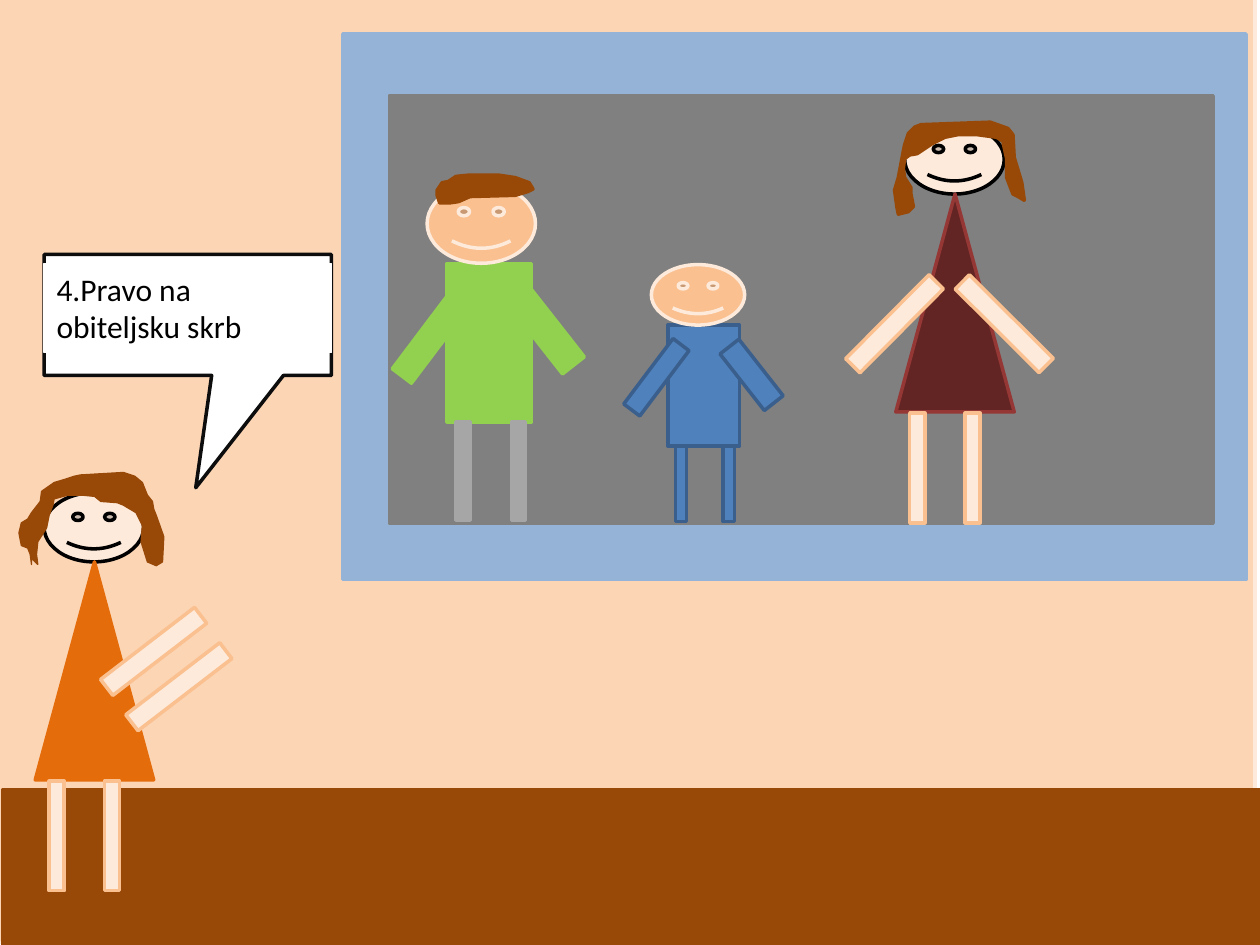
from dataclasses import dataclass
from typing import NamedTuple

from pptx import Presentation
from pptx.dml.color import RGBColor
from pptx.enum.shapes import MSO_SHAPE
from pptx.enum.text import MSO_ANCHOR
from pptx.util import Inches, Pt

RECT = MSO_SHAPE.RECTANGLE
FACE = MSO_SHAPE.SMILEY_FACE
DRESS = MSO_SHAPE.ISOSCELES_TRIANGLE
CALLOUT = MSO_SHAPE.RECTANGULAR_CALLOUT
TOP = MSO_ANCHOR.TOP


@dataclass(frozen=True)
class Theme:
    wall: str = "FCD5B5"
    skin: str = "FDEADA"
    skin_edge: str = "FAC090"
    brown: str = "984807"
    frame: str = "95B3D7"
    screen: str = "808080"
    blue: str = "4F81BD"
    blue_edge: str = "3A5F8C"
    green: str = "92D050"
    grey: str = "A6A6A6"
    maroon: str = "632523"
    maroon_edge: str = "953735"
    orange: str = "E46C0A"
    white: str = "FFFFFF"
    black: str = "000000"
    ink: str = "0D0D0D"
    font: str = "Calibri"
    text_size: float = 18
    line: float = 2
    thin: float = 0.75


T = Theme()


class Box(NamedTuple):
    x: float
    y: float
    w: float
    h: float
    rot: float = 0


class Paint(NamedTuple):
    fill: str
    edge: str


class Boy(NamedTuple):
    body: Box
    legs: tuple[Box, ...]
    arms: tuple[Box, ...]
    head: Box
    clothes: Paint
    trousers: Paint


class Woman(NamedTuple):
    x: float
    y: float
    dress: Paint
    arms: tuple[Box, ...]
    hair: list[tuple[int, int]]
    hair_line: float


SKIN = Paint(T.skin, T.skin_edge)
BLUE = Paint(T.blue, T.blue_edge)
HAIR = Paint(T.brown, T.brown)

# Hair outlines, in hundredths of an inch
MAN_HAIR = [(349, 161), (357, 161), (364, 160), (373, 156), (409, 155),
            (419, 152), (423, 150), (420, 145), (409, 141), (396, 139),
            (383, 139), (372, 139), (362, 140), (356, 144), (351, 145),
            (347, 151), (347, 155)]
MOTHER_HAIR = [(723, 149), (718, 141), (717, 134), (718, 126), (722, 123),
               (728, 122), (740, 114), (750, 109), (760, 107), (776, 107),
               (791, 109), (796, 112), (797, 117), (799, 126), (799, 141),
               (804, 154), (808, 156), (813, 159), (811, 145), (808, 135),
               (805, 125), (804, 107), (800, 102), (786, 97), (731, 99),
               (726, 101), (721, 106), (718, 115), (717, 120), (713, 141),
               (710, 151), (712, 165), (713, 170), (721, 168), (725, 164),
               (723, 154)]
GIRL_HAIR = [(30, 448), (29, 440), (30, 430), (37, 419), (39, 409), (42, 401),
             (43, 396), (54, 393), (65, 393), (75, 394), (80, 398), (93, 399),
             (98, 401), (108, 407), (113, 417), (112, 430), (117, 446),
             (124, 449), (129, 446), (130, 426), (124, 409), (122, 404),
             (121, 398), (117, 393), (113, 383), (107, 378), (98, 375),
             (64, 377), (59, 378), (53, 380), (43, 383), (33, 390), (32, 398),
             (25, 407), (22, 412), (17, 415), (15, 423), (17, 433), (22, 435),
             (24, 440), (25, 448), (25, 443)]

MAN = Boy(
    body=Box(3.55, 2.09, 0.67, 1.26),
    legs=tuple(Box(x, 3.35, 0.11, 0.78) for x in (4.06, 3.62)),
    arms=(Box(3.35, 2.22, 0.19, 0.85, 37), Box(4.21, 2.23, 0.22, 0.75, 321.9)),
    head=Box(3.39, 1.46, 0.86, 0.63),
    clothes=Paint(T.green, T.green), trousers=Paint(T.grey, T.grey))
CHILD = Boy(
    body=Box(5.3, 2.58, 0.57, 0.96),
    legs=tuple(Box(x, 3.54, 0.09, 0.6) for x in (5.74, 5.36)),
    arms=(Box(5.13, 2.67, 0.16, 0.65, 37), Box(5.87, 2.69, 0.19, 0.57, 321.9)),
    head=Box(5.17, 2.1, 0.74, 0.48),
    clothes=BLUE, trousers=BLUE)
MOTHER = Woman(
    7.11, 0.99, Paint(T.maroon, T.maroon_edge),
    (Box(6.63, 2.49, 0.94, 0.16, 314.8), Box(7.5, 2.49, 0.94, 0.16, 44.9)),
    MOTHER_HAIR, T.line)
GIRL = Woman(
    0.28, 3.91, Paint(T.orange, T.orange),
    (Box(0.75, 5.09, 0.94, 0.16, 322.5), Box(0.95, 5.37, 0.94, 0.16, 322.5)),
    GIRL_HAIR, T.thin)


def style(s, paint: Paint, width: float = T.line) -> None:
    s.shadow.inherit = False
    s.fill.solid()
    s.fill.fore_color.rgb = RGBColor.from_string(paint.fill)
    s.line.color.rgb = RGBColor.from_string(paint.edge)
    s.line.width = Pt(width)


def draw(shapes, kind, box: Box, paint: Paint, width: float = T.line):
    s = shapes.add_shape(kind, *(Inches(v) for v in box[:4]))
    s.rotation = box.rot
    style(s, paint, width)
    return s


def draw_hair(shapes, points: list[tuple[int, int]], width: float) -> None:
    builder = shapes.build_freeform(*points[0], scale=Inches(0.01))
    builder.add_line_segments(points[1:], close=True)
    style(builder.convert_to_shape(), HAIR, width)


def draw_boy(shapes, boy: Boy) -> None:
    draw(shapes, RECT, boy.body, boy.clothes)
    for leg in boy.legs:
        draw(shapes, RECT, leg, boy.trousers)
    for arm in boy.arms:
        draw(shapes, RECT, arm, boy.clothes)
    draw(shapes, FACE, boy.head, Paint(T.skin_edge, T.skin))


def draw_woman(shapes, woman: Woman) -> None:
    x, y = woman.x, woman.y
    draw(shapes, FACE, Box(x + 0.07, y, 0.79, 0.55), Paint(T.skin, T.black))
    draw(shapes, DRESS, Box(x, y + 0.55, 0.94, 1.73), woman.dress)
    for arm in woman.arms:
        draw(shapes, RECT, arm, SKIN)
    for dx in (0.11, 0.55):
        draw(shapes, RECT, Box(x + dx, y + 2.29, 0.12, 0.87), SKIN)
    draw_hair(shapes, woman.hair, woman.hair_line)


def draw_speech(shapes, text: str) -> None:
    bubble = draw(shapes, CALLOUT, Box(0.35, 2.02, 2.28, 0.96), Paint(T.white, T.ink))
    bubble.adjustments[0] = 0.028
    bubble.adjustments[1] = 1.429
    s = shapes.add_textbox(Inches(0.35), Inches(2.09), Inches(2.28), Inches(0.71))
    style(s, Paint(T.white, T.white), T.thin)
    tf = s.text_frame
    tf.word_wrap = True
    tf.vertical_anchor = TOP
    tf.text = text
    font = tf.paragraphs[0].runs[0].font
    font.name, font.size = T.font, Pt(T.text_size)
    font.color.rgb = RGBColor.from_string(T.black)


def main() -> None:
    prs = Presentation()
    prs.slide_width, prs.slide_height = Inches(10), Inches(7.5)
    shapes = prs.slides.add_slide(prs.slide_layouts[6]).shapes

    # Room
    draw(shapes, RECT, Box(-0.04, -0.02, 10, 7.5), Paint(T.wall, T.skin))
    draw(shapes, RECT, Box(0.02, 6.27, 10, 1.23), HAIR)

    # Framed family
    family = shapes.add_group_shape().shapes
    draw(family, RECT, Box(2.72, 0.27, 7.17, 4.33), Paint(T.frame, T.frame))
    draw(family, RECT, Box(3.09, 0.76, 6.54, 3.39), Paint(T.screen, T.screen))
    draw_boy(family, CHILD)
    draw_boy(family, MAN)
    draw_hair(family, MAN_HAIR, T.line)
    draw_woman(family, MOTHER)

    # Girl and her words
    draw_woman(shapes.add_group_shape().shapes, GIRL)
    draw_speech(shapes.add_group_shape().shapes, "4.Pravo na obiteljsku skrb")

    prs.save("out.pptx")


if __name__ == "__main__":
    main()
